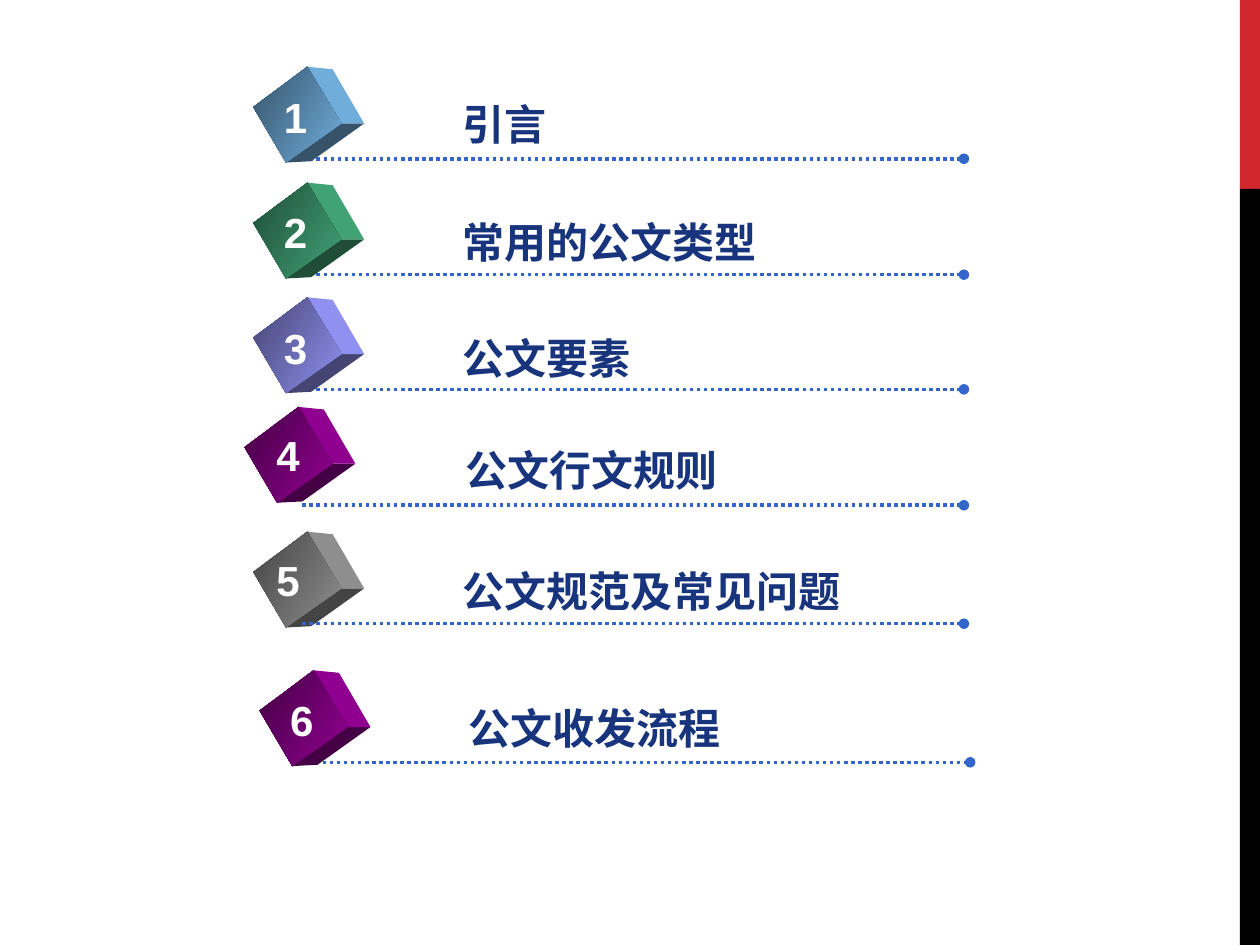
"""Build an agenda slide with six numbered cubes above dotted rules."""
from dataclasses import dataclass

from lxml import etree
from pptx import Presentation
from pptx.dml.color import RGBColor
from pptx.enum import dml, shapes, text
from pptx.oxml import ns
from pptx.util import Inches, Pt

NAVY, BLUE, WHITE = "17347D", "3366CC", "FFFFFF"
TEXT_SIZE = 24
TEXT_HEIGHT = 0.5
LINE_LEFT, LINE_LENGTH = 2.4, 5.25

FRONT = [(-0.08, 0.22), (0.35, -0.1), (0.62, 0.35), (0.18, 0.66)]
SIDE = [(0.35, -0.1), (0.55, -0.08), (0.8, 0.35), (0.62, 0.35)]
BASE = [(0.18, 0.66), (0.62, 0.35), (0.8, 0.35), (0.38, 0.65)]


@dataclass
class Item:
    title: str
    light: str
    dark: str
    cube: tuple[float, float]
    number: tuple[float, float]
    label: tuple[float, float]
    line_y: float
    shift: float = 0
    line_in_front: bool = False


ITEMS = [
    Item("引言", "70ADDB", "36536A", (2.09, 0.63), (2.15, 0.68), (3.57, 0.73), 1.26),
    Item("常用的公文类型", "41A276", "1F4D38", (2.09, 1.55), (2.15, 1.59), (3.57, 1.67), 2.18),
    Item("公文要素", "9090F0", "454573", (2.09, 2.46), (2.15, 2.51), (3.57, 2.59), 3.09),
    Item("公文行文规则", "900090", "450045", (2.02, 3.33), (2.09, 3.36), (3.6, 3.48), 4.01),
    Item("公文规范及常见问题", "8E8E8E", "444444", (2.09, 4.32), (2.09, 4.35), (3.57, 4.44), 4.95,
         line_in_front=True),
    Item("公文收发流程", "900090", "450045", (2.14, 5.42), (2.2, 5.46), (3.62, 5.53), 6.05,
         shift=0.05),
]


def rgb(value: str) -> RGBColor:
    return RGBColor.from_string(value)


def add_bar(s, top: float, height: float, color: str) -> None:
    bar = s.shapes.add_shape(shapes.MSO_SHAPE.RECTANGLE, Inches(9.84), Inches(top),
                             Inches(0.16), Inches(height))
    bar.shadow.inherit = False
    bar.fill.solid()
    bar.fill.fore_color.rgb = rgb(color)
    bar.line.fill.background()


def add_face(s, origin: tuple[float, float], corners: list, start: str, end: str) -> None:
    points = [(Inches(origin[0] + x), Inches(origin[1] + y)) for x, y in corners]
    builder = s.shapes.build_freeform(*points[0])
    builder.add_line_segments(points[1:])
    face = builder.convert_to_shape()
    face.shadow.inherit = False
    face.line.fill.background()
    if start == end:
        face.fill.solid()
        face.fill.fore_color.rgb = rgb(start)
        return
    face.fill.gradient()
    face.fill.gradient_angle = 330
    for stop, color in zip(face.fill.gradient_stops, (start, end)):
        stop.color.rgb = rgb(color)


def add_cube(s, item: Item) -> None:
    add_face(s, item.cube, BASE, item.dark, item.dark)
    add_face(s, item.cube, SIDE, item.light, item.light)
    add_face(s, item.cube, FRONT, item.dark, item.light)


def add_rule(s, item: Item) -> None:
    left, y = LINE_LEFT + item.shift, Inches(item.line_y)
    rule = s.shapes.add_connector(shapes.MSO_CONNECTOR.STRAIGHT, Inches(left), y,
                                  Inches(left + LINE_LENGTH), y)
    rule.line.color.rgb = rgb(BLUE)
    rule.line.width = Pt(2)
    rule.line.dash_style = dml.MSO_LINE.ROUND_DOT
    etree.SubElement(rule.line._get_or_add_ln(), ns.qn("a:tailEnd"), type="oval")
    etree.SubElement(rule._element.spPr, ns.qn("a:effectLst"))


def add_text(s, words: str, at: tuple[float, float], width: float, color: str,
             align: text.PP_ALIGN) -> None:
    box = s.shapes.add_textbox(Inches(at[0]), Inches(at[1]), Inches(width), Inches(TEXT_HEIGHT))
    tf = box.text_frame
    tf.word_wrap = False
    tf.auto_size = text.MSO_AUTO_SIZE.SHAPE_TO_FIT_TEXT
    p = tf.paragraphs[0]
    p.alignment = align
    r = p.add_run()
    r.text = words
    r.font.name = "Arial"
    r.font.size = Pt(TEXT_SIZE)
    r.font.bold = True
    r.font.color.rgb = rgb(color)


def add_item(s, number: int, item: Item) -> None:
    steps = [add_cube, add_rule] if item.line_in_front else [add_rule, add_cube]
    for step in steps:
        step(s, item)
    add_text(s, str(number), item.number, 0.39, WHITE, text.PP_ALIGN.CENTER)
    label_width = len(item.title) * TEXT_SIZE / 72 + 0.2
    add_text(s, item.title, item.label, label_width, NAVY, text.PP_ALIGN.LEFT)


def main() -> None:
    prs = Presentation()
    prs.slide_width, prs.slide_height = Inches(10), Inches(7.5)
    s = prs.slides.add_slide(prs.slide_layouts[6])
    add_bar(s, 0, 1.5, "D1282E")
    add_bar(s, 1.5, 6, "000000")
    for number, item in enumerate(ITEMS, 1):
        add_item(s, number, item)
    prs.save("out.pptx")


if __name__ == "__main__":
    main()
